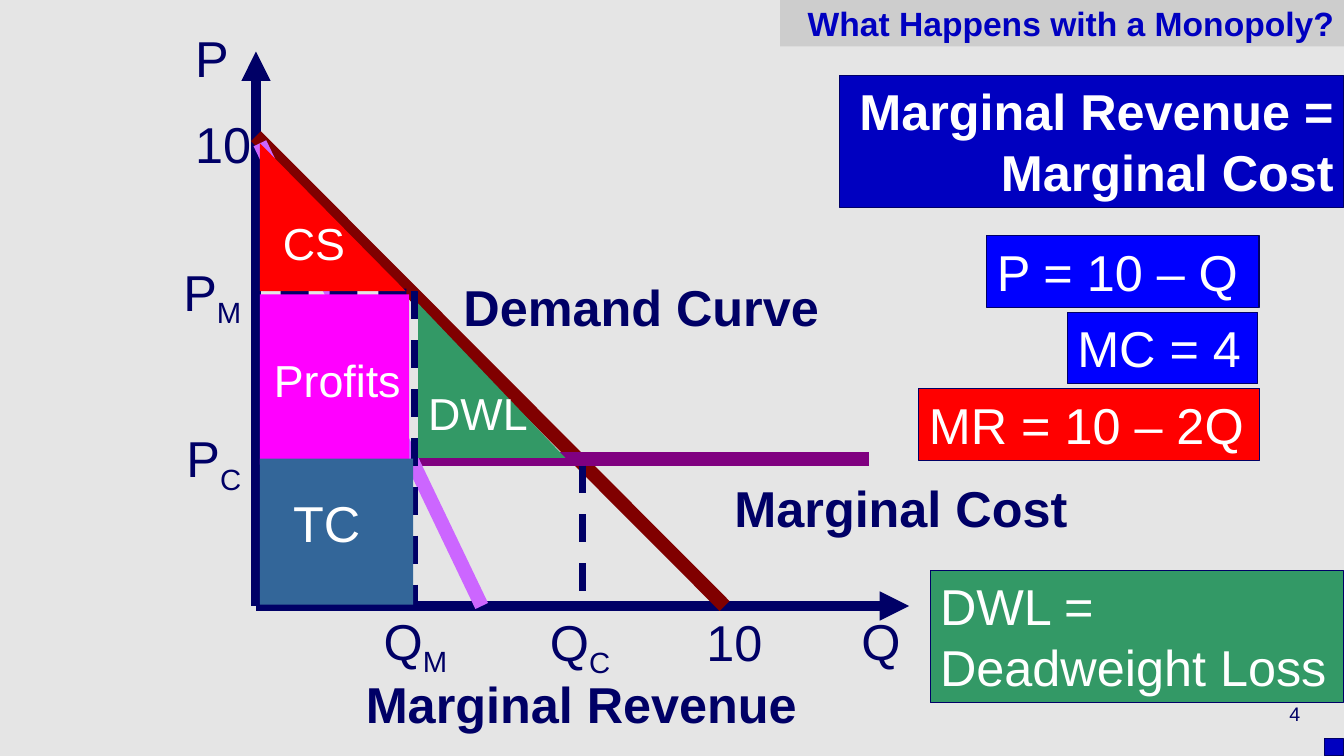
from pptx import Presentation
from pptx import util as u
from pptx.dml.color import RGBColor
from pptx.enum import dml, shapes, text
from pptx.oxml.ns import qn
from lxml import etree

NAVY = RGBColor(0x00, 0x00, 0x66)
ROYAL = RGBColor(0x00, 0x00, 0xC0)
BLUE = RGBColor(0x00, 0x00, 0xFF)
RED = RGBColor(0xFF, 0x00, 0x00)
MAROON = RGBColor(0x80, 0x00, 0x00)
PURPLE = RGBColor(0x80, 0x00, 0x80)
LILAC = RGBColor(0xCC, 0x66, 0xFF)
PINK = RGBColor(0xFF, 0x00, 0xFF)
GREEN = RGBColor(0x33, 0x99, 0x66)
STEEL = RGBColor(0x33, 0x66, 0x99)
WHITE = RGBColor(0xFF, 0xFF, 0xFF)
PALE = RGBColor(0xE5, 0xE5, 0xE5)
GREY = RGBColor(0xCD, 0xCD, 0xCD)

RECT = shapes.MSO_SHAPE.RECTANGLE
WEDGE = shapes.MSO_SHAPE.RIGHT_TRIANGLE
LEFT, RIGHT = text.PP_ALIGN.LEFT, text.PP_ALIGN.RIGHT
TOP, MIDDLE = text.MSO_ANCHOR.TOP, text.MSO_ANCHOR.MIDDLE


class Board:
    """Holds the style and the current slide."""
    face = "Arial"
    size = 36
    row = 1.8

    def __init__(self, slide):
        self.slide = slide
        fill = slide.background.fill
        fill.solid()
        fill.fore_color.rgb = PALE

    def letter(self, shape, words, color, size=None, bold=False,
               align=LEFT, anchor=TOP, wrap=True, sub=None):
        frame = shape.text_frame
        frame.word_wrap = wrap
        frame.vertical_anchor = anchor
        para = frame.paragraphs[0]
        para.alignment = align
        font = para.font
        font.name, font.size, font.bold = self.face, u.Pt(size or self.size), bold
        font.color.rgb = color
        para.add_run().text = words
        if sub:
            run = para.add_run()
            run.text = sub
            run.font._element.set("baseline", "-25000")

    def label(self, words, x, y, w, h=row, color=NAVY, wrap=False, **style):
        box = self.slide.shapes.add_textbox(u.Cm(x), u.Cm(y), u.Cm(w), u.Cm(h))
        self.letter(box, words, color, wrap=wrap, **style)

    def area(self, x, y, w, h, fill, kind=RECT, edge=None):
        shape = self.slide.shapes.add_shape(kind, u.Cm(x), u.Cm(y), u.Cm(w), u.Cm(h))
        shape.shadow.inherit = False
        shape.fill.solid()
        shape.fill.fore_color.rgb = fill
        if edge is None:
            shape.line.fill.background()
        else:
            shape.line.color.rgb = edge
            shape.line.width = u.Pt(0.75)
        return shape

    def panel(self, words, x, y, w, h, fill, **style):
        self.letter(self.area(x, y, w, h, fill, edge=NAVY), words, WHITE, **style)

    def line(self, x1, y1, x2, y2, color=NAVY, width=10, dash=False, arrow=False):
        link = self.slide.shapes.add_connector(
            shapes.MSO_CONNECTOR.STRAIGHT, u.Cm(x1), u.Cm(y1), u.Cm(x2), u.Cm(y2))
        link.line.color.rgb = color
        link.line.width = u.Pt(width)
        if dash:
            link.line.dash_style = dml.MSO_LINE.DASH
        props = link._element.spPr
        if arrow:
            etree.SubElement(props.find(qn("a:ln")), qn("a:tailEnd"), type="triangle")
        etree.SubElement(props, qn("a:effectLst"))


def main():
    deck = Presentation()
    deck.slide_width, deck.slide_height = u.Cm(33.87), u.Cm(19.05)
    board = Board(deck.slides.add_slide(deck.slide_layouts[6]))

    # Title, page number and corner mark
    title = board.area(19.66, 0, 14.21, 1.17, GREY)
    board.letter(title, "What Happens with a Monopoly?", ROYAL, size=24,
                 bold=True, align=RIGHT, anchor=MIDDLE)
    board.label("4", 25.96, 17.35, 7.06, 1.27, size=14, align=RIGHT,
                anchor=MIDDLE, wrap=True)
    board.area(33.38, 18.62, 0.48, 0.43, ROYAL, edge=NAVY)

    # Axes, demand and marginal cost
    left, base, cost = 6.45, 15.27, 11.56
    board.line(left, base, 22.91, base, width=7, arrow=True)
    board.line(left, base, left, 1.3, width=7, arrow=True)
    board.line(left, 3.43, 18.26, base, MAROON)
    board.line(6.6, cost, 21.89, cost, PURPLE)

    # Competitive quantity, marginal revenue, monopoly price and quantity
    board.line(14.68, 11.73, 14.68, 15.24, width=5, dash=True)
    board.line(6.55, 3.61, 12.14, base, LILAC)
    board.line(10.44, 7.34, 10.44, 15.24, width=5, dash=True)
    board.line(10.24, 7.36, 6.55, 7.34, width=5, dash=True)

    # Axis labels
    board.label("P", 4.67, 0.56, 2.13, wrap=True)
    for words, sub, x, y, w in (
            ("10", None, 4.67, 2.72, 1.93),
            ("P", "M", 4.37, 6.45, 2.08),
            ("P", "C", 4.45, 10.64, 1.98),
            ("Q", "M", 9.42, 15.24, 2.24),
            ("Q", "C", 13.61, 15.27, 2.13),
            ("10", None, 17.55, 15.27, 1.96),
            ("Q", None, 21.46, 15.24, 1.52)):
        board.label(words, x, y, w, sub=sub)

    # Curve names
    board.label("Demand Curve", 11.43, 6.83, 10.08, bold=True, wrap=True)
    board.label("Marginal Cost", 18.26, 11.89, 8.99, bold=True)
    board.label("Marginal Revenue", 8.97, 16.84, 11.48, bold=True)

    # Welfare areas with their names
    for kind, fill, spot, words, x, y, w, size in (
            (WEDGE, RED, (6.55, 3.61, 3.68, 3.73), "CS", 6.88, 5.31, 2.11, 32),
            (RECT, PINK, (6.55, 7.42, 3.76, 4.29), "Profits", 6.65, 8.76, 3.73, 32),
            (WEDGE, GREEN, (10.54, 7.65, 3.71, 3.89), "DWL", 10.54, 9.6, 3.05, 32),
            (RECT, STEEL, (6.55, cost, 3.86, 3.68), "TC", 7.14, 12.27, 2.21, 36)):
        board.area(*spot, fill, kind)
        board.label(words, x, y, w, size * 0.05, WHITE, size=size)

    # Formula panels
    board.panel("Marginal Revenue = Marginal Cost", 21.16, 1.9, 12.71, 3.33,
                ROYAL, bold=True, align=RIGHT)
    board.panel("P = 10 – Q", 24.87, 5.94, 6.86, board.row, BLUE)
    board.panel("MC = 4", 26.9, 7.87, 4.8, board.row, BLUE)
    board.panel("MR = 10 – 2Q", 23.16, 9.8, 8.59, board.row, RED)
    board.panel("DWL = Deadweight Loss", 23.44, 14.38, 10.41, 3.33, GREEN)

    deck.save("out.pptx")


if __name__ == "__main__":
    main()
